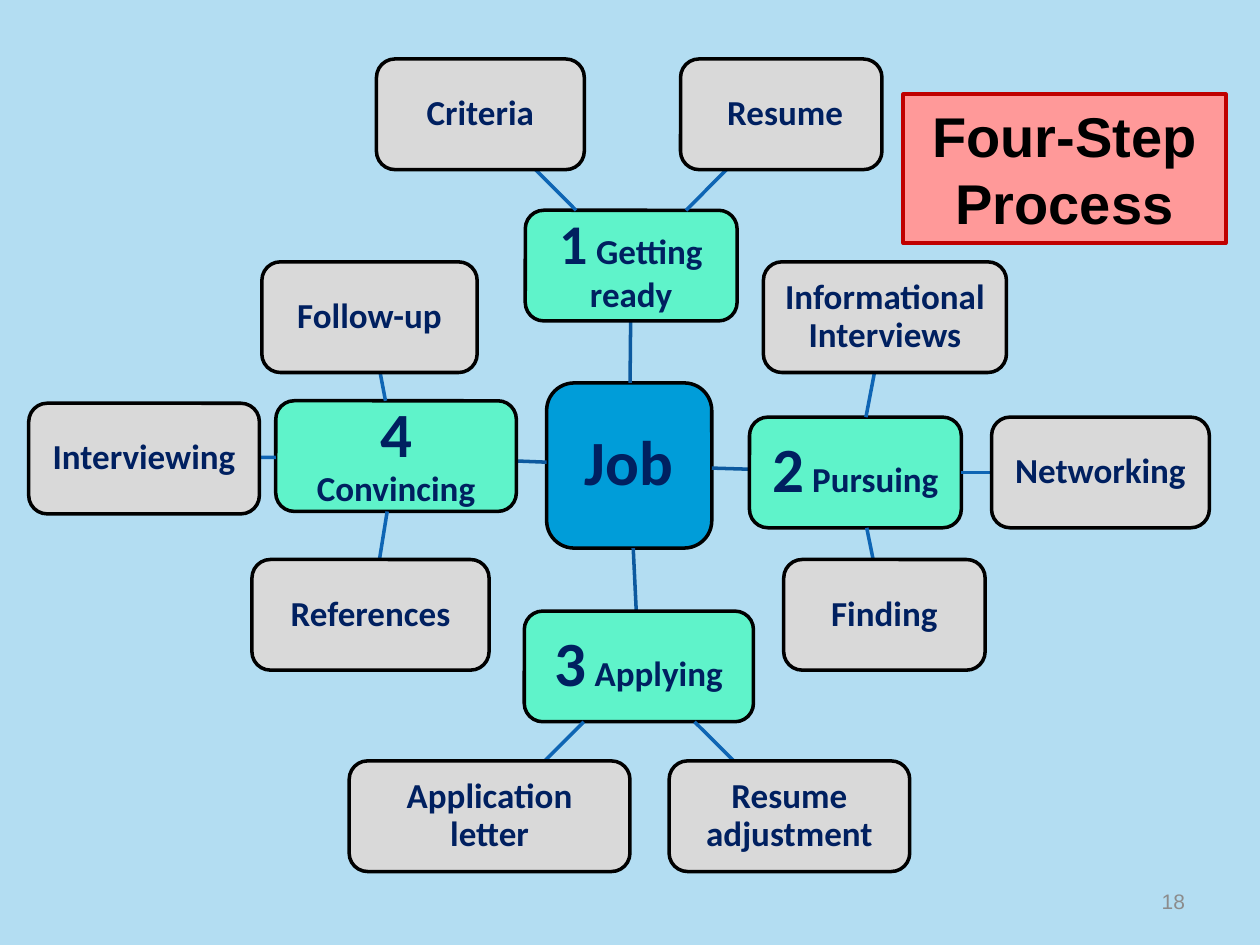
from pptx import Presentation
from pptx.dml.color import RGBColor
from pptx.enum.shapes import MSO_CONNECTOR, MSO_SHAPE
from pptx.enum.text import MSO_ANCHOR, MSO_AUTO_SIZE, PP_ALIGN
from pptx.oxml.ns import qn
from pptx.util import Cm, Pt
from lxml import etree

STRAIGHT = MSO_CONNECTOR.STRAIGHT
ROUNDED = MSO_SHAPE.ROUNDED_RECTANGLE
MIDDLE = MSO_ANCHOR.MIDDLE
NO_AUTOFIT = MSO_AUTO_SIZE.NONE
CENTER, RIGHT = PP_ALIGN.CENTER, PP_ALIGN.RIGHT

NAVY, BLACK = "002060", "000000"
SPOKE, BRANCH = "0C599F", "0E65B4"
BOX_H = 2.23

# Boxes are (left, top, width, height) in cm.
JOB = (11.02, 7.72, 3.33, 3.33)

# Each step: number, number size, label, (left, top, width), details
STEPS = [
    ("1", 32, " Getting ready", (10.59, 4.24, 4.27), [
        ("Criteria", (7.59, 1.19, 4.19)),
        (" Resume", (13.72, 1.19, 4.06)),
    ]),
    ("2", 36, " Pursuing", (15.11, 8.41, 4.27), [
        ("Informational Interviews", (15.39, 5.28, 4.9)),
        ("Networking", (19.99, 8.41, 4.39)),
        ("Finding", (15.8, 11.28, 4.06)),
    ]),
    ("3", 36, " Applying", (10.57, 12.32, 4.62), [
        ("Resume adjustment", (13.49, 15.34, 4.85)),
        ("Application letter", (7.04, 15.34, 5.66)),
    ]),
    ("4", 36, " Convincing", (5.56, 8.08, 4.85), [
        ("References", (5.08, 11.28, 4.78)),
        ("Interviewing", (0.58, 8.13, 4.65)),
        ("Follow-up", (5.28, 5.28, 4.34)),
    ]),
]


def color(hex_code):
    return RGBColor.from_string(hex_code)


def paint(sp, fill, line, width):
    sp.fill.solid()
    sp.fill.fore_color.rgb = color(fill)
    sp.line.color.rgb = color(line)
    sp.line.width = Pt(width)


def format_run(r, font, size, hex_code, bold=True):
    r.font.name = font
    r.font.size = Pt(size)
    r.font.bold = bold
    r.font.color.rgb = color(hex_code)


def center(box):
    left, top, width, height = box
    return left + width / 2, top + height / 2


def edge_point(box, target):
    """Where the line from the box's centre to the target's centre leaves the box."""
    (x, y), (tx, ty) = center(box), center(target)
    dx, dy = tx - x, ty - y
    scale = 0.5 / max(abs(dx) / box[2], abs(dy) / box[3])
    return x + dx * scale, y + dy * scale


def add_link(s, start, end, hex_code):
    points = edge_point(start, end) + edge_point(end, start)
    link = s.shapes.add_connector(STRAIGHT, *(Cm(v) for v in points))
    link.line.color.rgb = color(hex_code)
    link.line.width = Pt(2)
    etree.SubElement(link._element.spPr, qn("a:effectLst"))


def add_box(s, box, fill, runs, inset):
    """Add a rounded box; runs is a list of (text, size)."""
    sp = s.shapes.add_shape(ROUNDED, *(Cm(v) for v in box))
    sp.shadow.inherit = False
    paint(sp, fill, BLACK, 2)
    tf = sp.text_frame
    tf.word_wrap = True
    tf.vertical_anchor = MIDDLE
    tf.margin_left = tf.margin_right = Cm(inset)
    tf.margin_top = tf.margin_bottom = Cm(inset)
    p = tf.paragraphs[0]
    p.alignment = CENTER
    p.line_spacing = 0.9
    for text, size in runs:
        r = p.add_run()
        r.text = text
        format_run(r, "Calibri", size, NAVY)


def set_title(s, text):
    sp = s.shapes.title
    sp.left, sp.top, sp.width, sp.height = Cm(18.21), Cm(1.9), Cm(6.5), Cm(3)
    paint(sp, "FF9999", "C00000", 2.25)
    tf = sp.text_frame
    tf.text = text
    tf.word_wrap = True
    tf.auto_size = NO_AUTOFIT
    tf.vertical_anchor = MIDDLE
    p = tf.paragraphs[0]
    p.alignment = CENTER
    format_run(p.runs[0], "Arial", 32, BLACK)


def add_page_number(s, number):
    tf = s.shapes.add_textbox(Cm(18.21), Cm(17.65), Cm(5.93), Cm(1.02)).text_frame
    tf.text = number
    tf.word_wrap = True
    tf.vertical_anchor = MIDDLE
    p = tf.paragraphs[0]
    p.alignment = RIGHT
    format_run(p.runs[0], "Arial", 12, "8C8C8C", bold=False)


def main():
    prs = Presentation()
    prs.slide_width, prs.slide_height = Cm(25.4), Cm(19.05)
    s = prs.slides.add_slide(prs.slide_layouts[5])
    s.background.fill.solid()
    s.background.fill.fore_color.rgb = color("B3DDF2")

    set_title(s, "Four-Step Process")
    add_page_number(s, "18")
    add_box(s, JOB, "009DD9", [("Job", 36)], 0.43)
    for number, size, label, place, details in STEPS:
        step = (*place, BOX_H)
        add_link(s, JOB, step, SPOKE)
        add_box(s, step, "5FF3CA", [(number, size), (label, 20)], 0.35)
        for text, detail_place in details:
            detail = (*detail_place, BOX_H)
            add_link(s, step, detail, BRANCH)
            add_box(s, detail, "D9D9D9", [(text, 20)], 0.26)

    prs.save("out.pptx")


if __name__ == "__main__":
    main()
